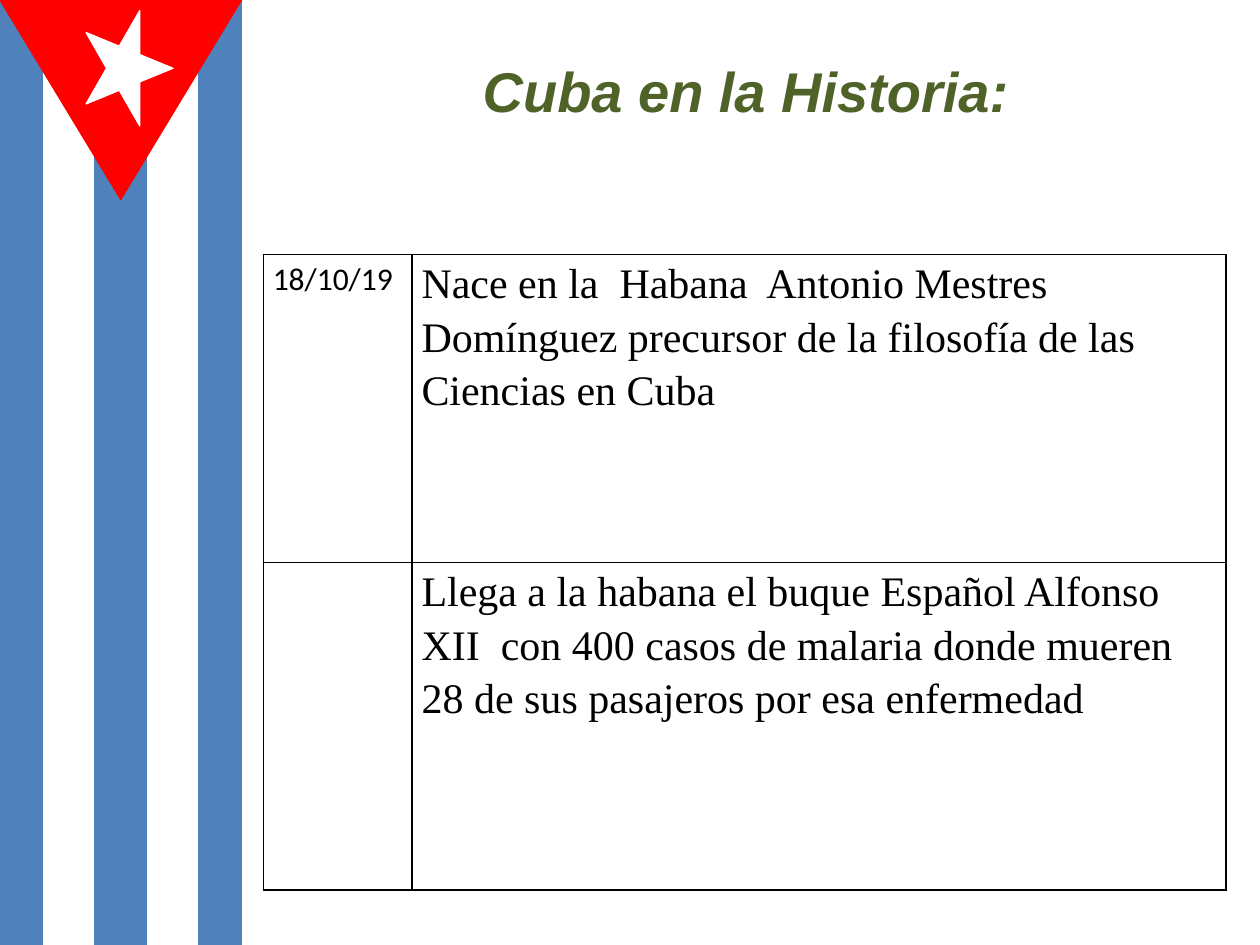
from lxml import etree
from pptx import Presentation
from pptx.dml.color import RGBColor
from pptx.enum.shapes import MSO_SHAPE
from pptx.enum.text import MSO_ANCHOR, PP_ALIGN
from pptx.oxml.ns import qn
from pptx.util import Pt

RECTANGLE = MSO_SHAPE.RECTANGLE
TRIANGLE = MSO_SHAPE.ISOSCELES_TRIANGLE
STAR = MSO_SHAPE.STAR_5_POINT
MIDDLE = MSO_ANCHOR.MIDDLE
LEFT, CENTER, JUSTIFY = PP_ALIGN.LEFT, PP_ALIGN.CENTER, PP_ALIGN.JUSTIFY

WHITE = RGBColor(0xFF, 0xFF, 0xFF)
BLACK = RGBColor(0, 0, 0)
BLUE = RGBColor(0x4F, 0x81, 0xBD)
RED = RGBColor(0xFF, 0, 0)
GREEN = RGBColor(0x4F, 0x62, 0x28)

EVENTS = [
    ("18/10/19", "Nace en la  Habana  Antonio Mestres Domínguez precursor "
                 "de la filosofía de las Ciencias en Cuba"),
    ("", "Llega a la habana el buque Español Alfonso XII  con 400 casos de "
         "malaria donde mueren 28 de sus pasajeros por esa enfermedad"),
]


def add_run(paragraph, text, font_name, size, color):
    """Add a formatted run to a paragraph and return it."""
    run = paragraph.add_run()
    run.text = text
    run.font.name = font_name
    run.font.size = Pt(size)
    run.font.color.rgb = color
    return run


def add_flag_part(flag, kind, box, color, rotation=0):
    """Add one plain coloured shape to the flag group."""
    shape = flag.shapes.add_shape(kind, *[Pt(value) for value in box])
    shape.shadow.inherit = False
    shape.fill.solid()
    shape.fill.fore_color.rgb = color
    shape.line.color.rgb = color
    shape.line.width = Pt(0.75)
    shape.rotation = rotation


def add_flag(slide, left, top, width, height):
    """Draw the upright flag inside the given box."""
    flag = slide.shapes.add_group_shape()
    add_flag_part(flag, RECTANGLE, (left, top + 36, width - 6, height - 36), WHITE)
    for offset, stripe_width in ((0, 24.5), (54, 29.5), (width - 24.5, 24.5)):
        add_flag_part(flag, RECTANGLE, (left + offset, top, stripe_width, height), BLUE)
    add_flag_part(flag, TRIANGLE, (left, top, width, 114), RED, 180)
    add_flag_part(flag, STAR, (left + 41, top + 14.2, 66, 49.7), WHITE, 90)


def add_title(slide, left, top, width, height):
    """Place and format the title placeholder."""
    title = slide.shapes.title
    title.left, title.top = Pt(left), Pt(top)
    title.width, title.height = Pt(width), Pt(height)
    frame = title.text_frame
    frame.word_wrap = True
    frame.vertical_anchor = MIDDLE
    frame.margin_bottom = Pt(40)
    paragraph = frame.paragraphs[0]
    paragraph.alignment = CENTER
    run = add_run(paragraph, "Cuba en la Historia:", "Arial", 32, GREEN)
    run.font.bold = True
    run.font.italic = True


def add_borders(cell):
    """Give a cell thin black borders and no fill."""
    properties = cell._tc.get_or_add_tcPr()
    for side in ("lnL", "lnR", "lnT", "lnB"):
        line = etree.SubElement(properties, qn(f"a:{side}"), w=str(Pt(1)))
        fill = etree.SubElement(line, qn("a:solidFill"))
        etree.SubElement(fill, qn("a:srgbClr"), val=str(BLACK))
    cell.fill.background()


def fill_cell(cell, text, alignment, font_name, size):
    """Format a cell and write its text."""
    cell.margin_left = cell.margin_right = Pt(5.4)
    cell.margin_top = cell.margin_bottom = Pt(0)
    add_borders(cell)
    if text:
        paragraph = cell.text_frame.paragraphs[0]
        paragraph.alignment = alignment
        paragraph.line_spacing = 1.15
        paragraph.space_after = Pt(10)
        add_run(paragraph, text, font_name, size, BLACK)


def add_events(slide, left, top, width, height):
    """Build the table of dates and events."""
    table = slide.shapes.add_table(
        len(EVENTS), 2, Pt(left), Pt(top), Pt(width), Pt(height)).table
    table.first_row = False
    table.horz_banding = False
    date_width, first_height = 85, 176
    table.columns[0].width = Pt(date_width)
    table.columns[1].width = Pt(width - date_width)
    table.rows[0].height = Pt(first_height)
    table.rows[1].height = Pt(height - first_height)
    for row, (date, event) in enumerate(EVENTS):
        fill_cell(table.cell(row, 0), date, JUSTIFY, "Calibri", 18)
        fill_cell(table.cell(row, 1), event, LEFT, "Times New Roman", 24)


def main():
    """Build and save the presentation."""
    presentation = Presentation()
    presentation.slide_width, presentation.slide_height = Pt(720), Pt(540)
    slide = presentation.slides.add_slide(presentation.slide_layouts[5])
    add_title(slide, 168.5, 11.5, 515.5, 116.5)
    add_flag(slide, 0, 0, 138, 540)
    add_events(slide, 150.5, 145.5, 550, 363)
    presentation.save("out.pptx")


if __name__ == "__main__":
    main()
